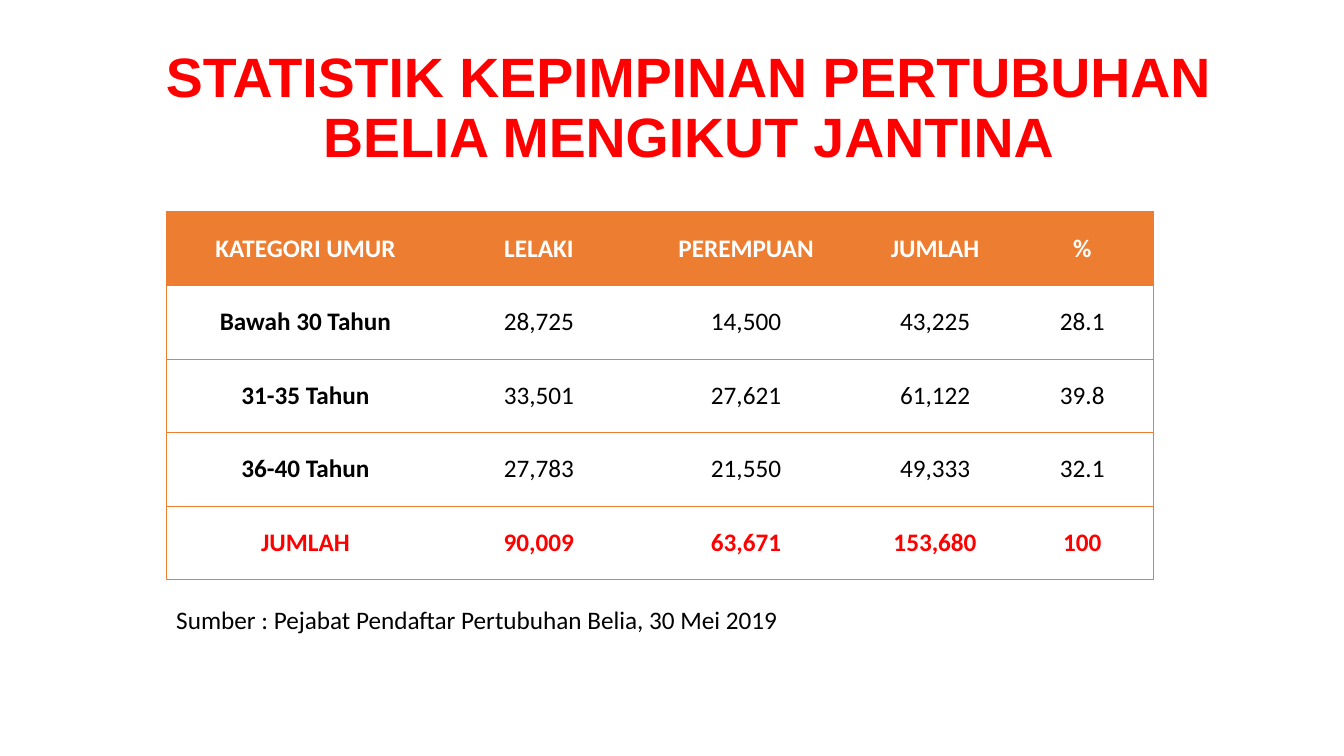
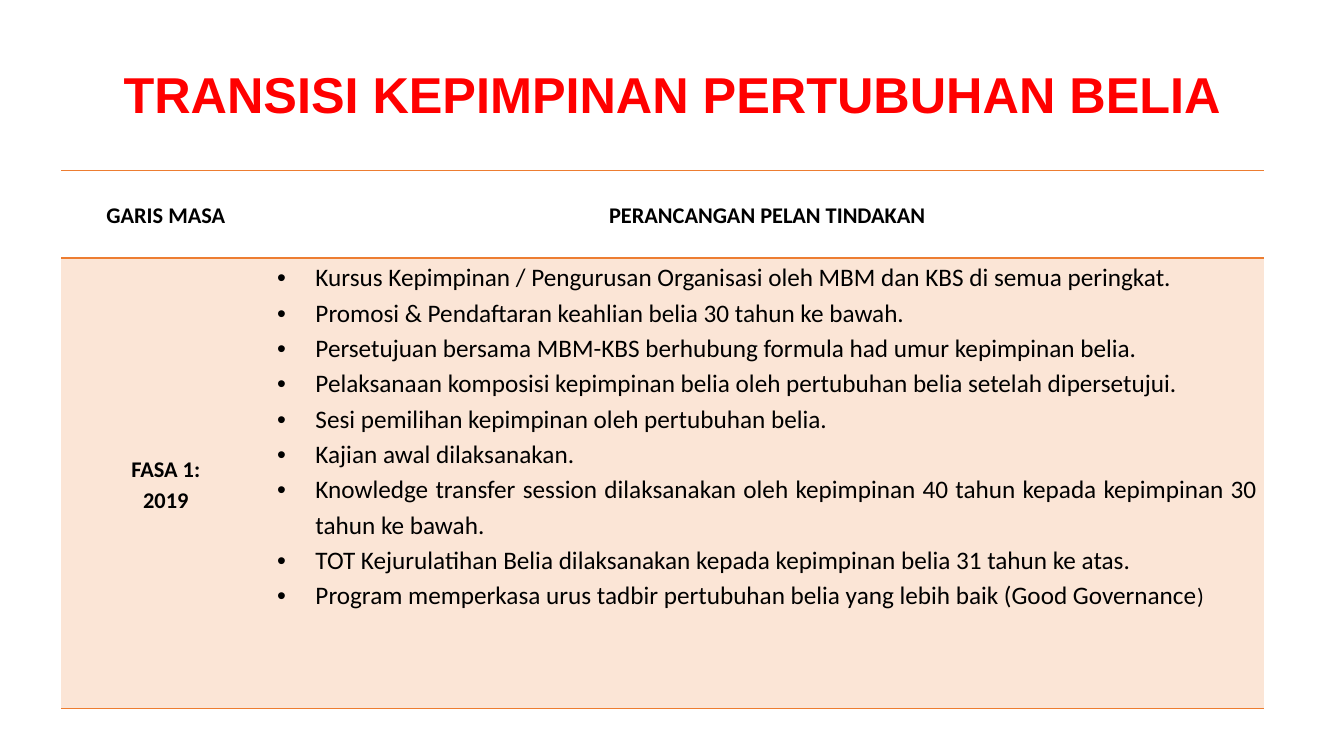
from lxml import etree
from pptx import Presentation
from pptx import util as u
from pptx.dml.color import RGBColor
from pptx.enum import text as t
from pptx.oxml import ns

RED, ORANGE, PEACH = "FF0000", "ED7D31", "FBE5D6"
BLACK, WHITE = "000000", "FFFFFF"
HEAD, BODY = "Arial", "Calibri"
LEFT, MID, JUST = t.PP_ALIGN.LEFT, t.PP_ALIGN.CENTER, t.PP_ALIGN.JUSTIFY
NO_STYLE = "{2D5ABB26-0587-4C30-8999-92F81FD0307C}"

AGES = [
    ["KATEGORI UMUR", "LELAKI", "PEREMPUAN", "JUMLAH", "%"],
    ["Bawah 30 Tahun", "28,725", "14,500", "43,225", "28.1"],
    ["31-35 Tahun", "33,501", "27,621", "61,122", "39.8"],
    ["36-40 Tahun", "27,783", "21,550", "49,333", "32.1"],
    ["JUMLAH", "90,009", "63,671", "153,680", "100"],
]
PLANS = [
    "Kursus Kepimpinan / Pengurusan Organisasi oleh MBM dan KBS di semua peringkat.",
    "Promosi & Pendaftaran keahlian belia 30 tahun ke bawah.",
    "Persetujuan bersama MBM-KBS berhubung formula had umur kepimpinan belia.",
    "Pelaksanaan komposisi kepimpinan belia oleh pertubuhan belia setelah dipersetujui.",
    "Sesi pemilihan kepimpinan oleh pertubuhan belia.",
    "Kajian awal dilaksanakan.",
    "Knowledge transfer session dilaksanakan oleh kepimpinan 40 tahun kepada kepimpinan 30 tahun ke bawah.",
    "TOT Kejurulatihan Belia dilaksanakan kepada kepimpinan belia 31 tahun ke atas.",
    "Program memperkasa urus tadbir pertubuhan belia yang lebih baik (Good Governance",
]


def color(code):
    return RGBColor.from_string(code)


def node(up, tag, **attrs):
    return etree.SubElement(up, ns.qn(tag), **attrs)


# Text
def add_run(para, words, size=18, font=BODY, ink=BLACK, bold=False):
    run = para.add_run()
    run.text = words
    run.font.size, run.font.name, run.font.bold = u.Pt(size), font, bold
    run.font.color.rgb = color(ink)


def bullet(para):
    props = para._p.get_or_add_pPr()
    dent = u.Inches(0.38)
    props.set("marL", str(dent))
    props.set("indent", str(-dent))
    node(props, "a:buFont", typeface="Arial")
    node(props, "a:buChar", char="•")


def write(frame, words, align=MID, space=1, dots=False, **style):
    """Fill a frame, one paragraph per line, and return the last one."""
    for i, line in enumerate(words.split("\n")):
        para = frame.add_paragraph() if i else frame.paragraphs[0]
        if dots:
            bullet(para)
        para.alignment, para.line_spacing = align, space
        add_run(para, line, **style)
    return para


def add_text(slide, words, box, wrap=True, anchor=t.MSO_ANCHOR.TOP, **style):
    frame = slide.shapes.add_textbox(*map(u.Inches, box)).text_frame
    frame.word_wrap, frame.vertical_anchor = wrap, anchor
    write(frame, words, **style)


def add_title(slide, words, box, size):
    add_text(slide, words, box, anchor=t.MSO_ANCHOR.MIDDLE, space=0.9,
             size=size, font=HEAD, ink=RED, bold=True)


# Tables
def add_grid(slide, left, top, cols, rows):
    size = map(u.Inches, (left, top, sum(cols), sum(rows)))
    table = slide.shapes.add_table(len(rows), len(cols), *size).table
    table.first_row = table.horz_banding = False
    table._tbl.tblPr.find(ns.qn("a:tableStyleId")).text = NO_STYLE
    for col, width in zip(table.columns, cols):
        col.width = u.Inches(width)
    for row, height in zip(table.rows, rows):
        row.height = u.Inches(height)
    return table


def set_cell(cell, fill, sides, width, anchor=t.MSO_ANCHOR.MIDDLE):
    cell.margin_left = cell.margin_right = u.Inches(0.07)
    cell.margin_top = cell.margin_bottom = 0
    cell.vertical_anchor = anchor
    props = cell._tc.get_or_add_tcPr()
    for side in sides:
        line = node(props, "a:ln" + side, w=str(u.Pt(width)))
        node(node(line, "a:solidFill"), "a:srgbClr", val=ORANGE)
    cell.fill.solid()
    cell.fill.fore_color.rgb = color(fill)
    return cell.text_frame


# Slides
def stats(slide):
    add_title(slide, "STATISTIK KEPIMPINAN PERTUBUHAN BELIA MENGIKUT JANTINA",
              (0.92, 0.44, 11.82, 1.3), 39.6)
    table = add_grid(slide, 1.65, 2.1, [2.76, 1.87, 2.24, 1.51, 1.41], [0.73] * 5)
    last = len(AGES) - 1
    inks = {0: WHITE, last: RED}
    for r, row in enumerate(AGES):
        for c, words in enumerate(row):
            sides = "L" * (c == 0) + "R" * (c == len(row) - 1) + "TB"
            frame = set_cell(table.cell(r, c), WHITE if r else ORANGE, sides, 0.5)
            write(frame, words, ink=inks.get(r, BLACK), bold=r in inks or c == 0)
    add_text(slide, "Sumber : Pejabat Pendaftar Pertubuhan Belia, 30 Mei 2019",
             (1.65, 5.95, 6.24, 0.4), wrap=False, align=LEFT)


def phases(slide):
    add_title(slide, "TRANSISI KEPIMPINAN PERTUBUHAN BELIA",
              (0.92, 0.24, 11.5, 1.45), 36)
    table = add_grid(slide, 0.61, 1.69, [2.07, 9.86], [0.87, 4.47])
    label = dict(space=1.15, size=16, bold=True)
    for c, words in enumerate(["GARIS MASA", "PERANCANGAN PELAN TINDAKAN"]):
        write(set_cell(table.cell(0, c), WHITE, "TB", 1), words, **label)
    write(set_cell(table.cell(1, 0), PEACH, "TB", 1), "FASA 1:\n2019", **label)
    frame = set_cell(table.cell(1, 1), PEACH, "TB", 1, t.MSO_ANCHOR.TOP)
    para = write(frame, "\n".join(PLANS), align=JUST, space=1.15, dots=True)
    add_run(para, ")", size=16)


def main():
    deck = Presentation()
    deck.slide_width, deck.slide_height = u.Inches(13.33), u.Inches(7.5)
    for build in (stats, phases):
        build(deck.slides.add_slide(deck.slide_layouts[6]))
    deck.save("out.pptx")


if __name__ == "__main__":
    main()
